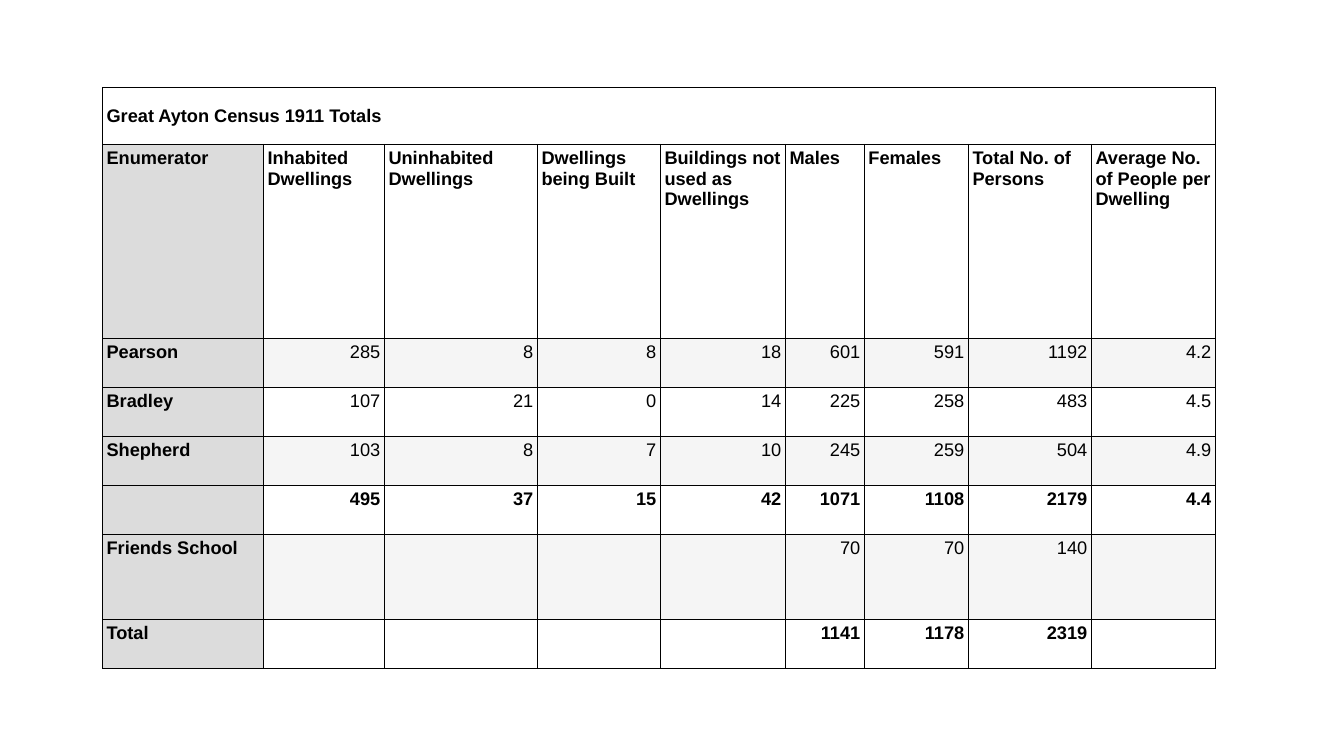
from lxml.etree import SubElement
from pptx import Presentation
from pptx.dml.color import RGBColor
from pptx.enum.text import MSO_ANCHOR as Anchor, PP_ALIGN as Align
from pptx.oxml.ns import qn
from pptx.util import Pt

BLACK = RGBColor(0x00, 0x00, 0x00)
NAME_GREY = RGBColor(0xDC, 0xDC, 0xDC)
BAND_GREY = RGBColor(0xF5, 0xF5, 0xF5)

THIN, THICK = 0.35, 0.75
COLUMN_WIDTHS = [115, 86.4, 109.3, 87.9, 89.3, 56.4, 74.3, 87.9, 88.6]
ROW_HEIGHTS = [40.7, 138.5, 35, 35, 35, 35, 60.8, 35.5]

TITLE = "Great Ayton Census 1911 Totals"
HEADINGS = ["Enumerator", "Inhabited Dwellings", "Uninhabited Dwellings",
            "Dwellings being Built", "Buildings not used as Dwellings",
            "Males", "Females", "Total No. of Persons",
            "Average No. of People per Dwelling"]
COUNTS = [
    ["Pearson", "285", "8", "8", "18", "601", "591", "1192", "4.2"],
    ["Bradley", "107", "21", "0", "14", "225", "258", "483", "4.5"],
    ["Shepherd", "103", "8", "7", "10", "245", "259", "504", "4.9"],
    ["", "495", "37", "15", "42", "1071", "1108", "2179", "4.4"],
    ["Friends School", "", "", "", "", "70", "70", "140", ""],
    ["Total", "", "", "", "", "1141", "1178", "2319", ""],
]
ROWS = [[TITLE] + [""] * 8, HEADINGS] + COUNTS
TITLE_ROW, HEADING_ROW = 0, 1
BOLD_ROWS = {TITLE_ROW, HEADING_ROW, 5, 7}
BANDED_ROWS = {2, 4, 6}


def set_borders(cell, left, right):
    """Draw the four cell edges; top and bottom are always thin."""
    properties = cell._tc.get_or_add_tcPr()
    for side, width in zip("LRTB", (left, right, THIN, THIN)):
        line = SubElement(properties, qn(f"a:ln{side}"), w=str(int(Pt(width))))
        fill = SubElement(line, qn("a:solidFill"))
        SubElement(fill, qn("a:srgbClr"), val=str(BLACK))


def set_fill(cell, color):
    if color is None:
        cell.fill.background()
    else:
        cell.fill.solid()
        cell.fill.fore_color.rgb = color


def set_text(cell, text, bold, align):
    cell.margin_left = cell.margin_right = Pt(3)
    cell.margin_top = cell.margin_bottom = Pt(3)
    cell.text_frame.text = text
    para = cell.text_frame.paragraphs[0]
    para.alignment = align
    for span in para.runs:
        span.font.name = "Arial"
        span.font.size = Pt(13)
        span.font.bold = bold
        span.font.color.rgb = BLACK


def add_census_table(page, left, top):
    frame = page.shapes.add_table(
        len(ROWS), len(COLUMN_WIDTHS), Pt(left), Pt(top),
        Pt(sum(COLUMN_WIDTHS)), Pt(sum(ROW_HEIGHTS)))
    table = frame.table
    table.first_row = table.horz_banding = False
    for column, width in zip(table.columns, COLUMN_WIDTHS):
        column.width = Pt(width)
    for row, height in zip(table.rows, ROW_HEIGHTS):
        row.height = Pt(height)

    # Cells: grey names on the left, right-aligned counts beside them
    for r, texts in enumerate(ROWS):
        for c, text in enumerate(texts):
            cell = table.cell(r, c)
            in_body = r > TITLE_ROW
            is_name = in_body and c == 0
            is_count = r > HEADING_ROW and c > 0
            set_borders(cell, THICK if in_body and c == 1 else THIN,
                        THICK if is_name else THIN)
            band = BAND_GREY if r in BANDED_ROWS else None
            set_fill(cell, NAME_GREY if is_name else band)
            set_text(cell, text, is_name or r in BOLD_ROWS,
                     Align.RIGHT if is_count else Align.LEFT)

    # Title across the full width
    title_cell = table.cell(TITLE_ROW, 0)
    title_cell.merge(table.cell(TITLE_ROW, len(COLUMN_WIDTHS) - 1))
    title_cell.vertical_anchor = Anchor.MIDDLE


def main():
    deck = Presentation()
    deck.slide_width, deck.slide_height = Pt(960), Pt(540)
    page = deck.slides.add_slide(deck.slide_layouts[6])
    add_census_table(page, 73.2, 62.3)
    deck.save("out.pptx")


if __name__ == "__main__":
    main()
